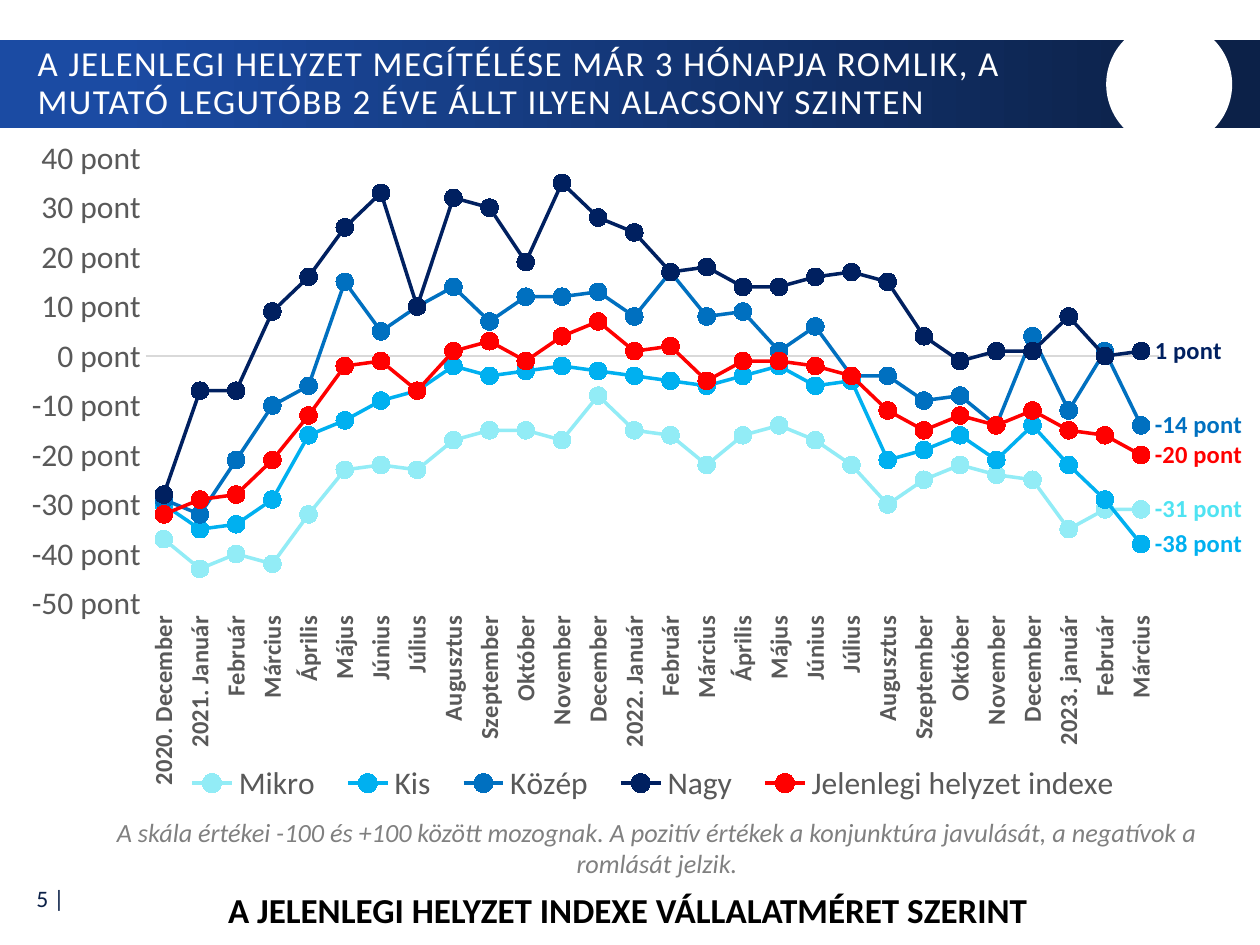
from dataclasses import dataclass

from lxml import etree
from pptx import Presentation
from pptx.chart.data import CategoryChartData
from pptx.dml.color import RGBColor
from pptx.enum.chart import (XL_CHART_TYPE, XL_LABEL_POSITION, XL_LEGEND_POSITION,
                             XL_MARKER_STYLE, XL_TICK_LABEL_POSITION, XL_TICK_MARK)
from pptx.enum.shapes import MSO_SHAPE
from pptx.enum.text import MSO_ANCHOR, PP_ALIGN
from pptx.oxml.ns import qn
from pptx.util import Cm, Pt

LINE_MARKERS = XL_CHART_TYPE.LINE_MARKERS
LABEL_RIGHT = XL_LABEL_POSITION.RIGHT
LEGEND_BOTTOM = XL_LEGEND_POSITION.BOTTOM
CIRCLE = XL_MARKER_STYLE.CIRCLE
LABELS_LOW = XL_TICK_LABEL_POSITION.LOW
NO_TICK = XL_TICK_MARK.NONE
RECTANGLE, OVAL = MSO_SHAPE.RECTANGLE, MSO_SHAPE.OVAL
TOP, MIDDLE = MSO_ANCHOR.TOP, MSO_ANCHOR.MIDDLE
LEFT, CENTER, RIGHT = PP_ALIGN.LEFT, PP_ALIGN.CENTER, PP_ALIGN.RIGHT


@dataclass(frozen=True)
class Theme:
    font: str = "Calibri"
    blue: str = "1B4BA3"
    navy: str = "0C2148"
    white: str = "FFFFFF"
    black: str = "000000"
    note: str = "808080"
    axis_text: str = "595959"
    axis_line: str = "D9D9D9"
    heading_size: float = 20
    large_size: float = 18
    note_size: float = 15
    label_size: float = 14
    page_size: float = 13.5


THEME = Theme()
POINT_FORMAT = 'General\\ "pont"'
EDGES = {"xMode": "edge", "yMode": "edge"}
PLOT_LAYOUT = {"layoutTarget": "inner", **EDGES,
               "x": 0.116, "y": 0.045, "w": 0.807, "h": 0.652}
LEGEND_LAYOUT = {**EDGES, "x": 0.135, "y": 0.925, "w": 0.77, "h": 0.07}

MONTHS = ["Január", "Február", "Március", "Április", "Május", "Június", "Július",
          "Augusztus", "Szeptember", "Október", "November", "December"]
CATEGORIES = (["2020. December", "2021. Január"] + MONTHS[1:]
              + ["2022. Január"] + MONTHS[1:] + ["2023. január"] + MONTHS[1:3])

# name, line colour, end label colour, values
SERIES = [
    ("Mikro", "92ECF6", "4FE3F2",
     [-37, -43, -40, -42, -32, -23, -22, -23, -17, -15, -15, -17, -8, -15,
      -16, -22, -16, -14, -17, -22, -30, -25, -22, -24, -25, -35, -31, -31]),
    ("Kis", "00B0F0", "00B0F0",
     [-30, -35, -34, -29, -16, -13, -9, -7, -2, -4, -3, -2, -3, -4,
      -5, -6, -4, -2, -6, -5, -21, -19, -16, -21, -14, -22, -29, -38]),
    ("Közép", "0070C0", "0070C0",
     [-29, -32, -21, -10, -6, 15, 5, 10, 14, 7, 12, 12, 13, 8,
      17, 8, 9, 1, 6, -4, -4, -9, -8, -14, 4, -11, 1, -14]),
    ("Nagy", "002060", "002060",
     [-28, -7, -7, 9, 16, 26, 33, 10, 32, 30, 19, 35, 28, 25,
      17, 18, 14, 14, 16, 17, 15, 4, -1, 1, 1, 8, 0, 1]),
    ("Jelenlegi helyzet indexe", "FF0000", "FF0000",
     [-32, -29, -28, -21, -12, -2, -1, -7, 1, 3, -1, 4, 7, 1,
      2, -5, -1, -1, -2, -4, -11, -15, -12, -14, -11, -15, -16, -20]),
]


def rgb(color):
    return RGBColor.from_string(color)


def set_attributes(target, values):
    for name, value in values.items():
        setattr(target, name, value)


def style_font(font, size, color, bold=False, italic=False):
    set_attributes(font, {"name": THEME.font, "size": Pt(size),
                          "bold": bold, "italic": italic})
    font.color.rgb = rgb(color)


def add_text(slide, box, text, size, color, align=CENTER, anchor=TOP, **style):
    """Add a wrapped one-paragraph text box and return its paragraph."""
    frame = slide.shapes.add_textbox(*map(Cm, box)).text_frame
    set_attributes(frame, {"word_wrap": True, "vertical_anchor": anchor})
    paragraph = frame.paragraphs[0]
    paragraph.alignment = align
    run = paragraph.add_run()
    run.text = text
    style_font(run.font, size, color, **style)
    return paragraph


def add_plain_shape(slide, kind, box):
    shape = slide.shapes.add_shape(kind, *map(Cm, box))
    shape.shadow.inherit = False
    shape.line.fill.background()
    return shape


def add_header(slide, left, top, width, height, title):
    """Gradient band with a white disc at its right end and the title on it."""
    fill = add_plain_shape(slide, RECTANGLE, (left, top, width, height)).fill
    fill.gradient()
    fill.gradient_angle = 0
    for stop, color, position in zip(fill.gradient_stops,
                                     (THEME.blue, THEME.navy), (0.09, 0.95)):
        stop.color.rgb = rgb(color)
        stop.position = position

    diameter = 2.54
    disc = add_plain_shape(slide, OVAL, (left + width - diameter - 0.56,
                                         top + (height - diameter) / 2,
                                         diameter, diameter))
    disc.fill.solid()
    disc.fill.fore_color.rgb = rgb(THEME.white)

    paragraph = add_text(slide, (left + 0.51, top + 0.04, width - 3.53, height - 0.08),
                         title, THEME.heading_size, THEME.white, LEFT, MIDDLE)
    paragraph.line_spacing = 0.9
    paragraph.runs[0].font._element.set("spc", "80")


def set_layout(parent, index, settings):
    """Place a chart part by fractions of the chart; index is its schema position."""
    for old_layout in parent.findall(qn("c:layout")):
        parent.remove(old_layout)
    layout = etree.Element(qn("c:layout"))
    parent.insert(index, layout)
    manual = etree.SubElement(layout, qn("c:manualLayout"))
    for name, value in settings.items():
        etree.SubElement(manual, qn(f"c:{name}")).set("val", str(value))


def style_axes(chart):
    category, value = chart.category_axis, chart.value_axis
    for axis, size, bold in ((category, THEME.label_size, True),
                             (value, THEME.large_size, False)):
        set_attributes(axis, {"major_tick_mark": NO_TICK, "minor_tick_mark": NO_TICK,
                              "has_major_gridlines": False})
        style_font(axis.tick_labels.font, size, THEME.axis_text, bold=bold)
    category.tick_label_position = LABELS_LOW
    category.format.line.color.rgb = rgb(THEME.axis_line)
    category.format.line.width = Pt(0.75)
    category._element.find(qn("c:txPr")).find(qn("a:bodyPr")).set("rot", "-5400000")
    set_attributes(value, {"minimum_scale": -50, "maximum_scale": 40, "major_unit": 10})
    set_attributes(value.tick_labels, {"number_format": POINT_FORMAT,
                                       "number_format_is_linked": False})
    value.format.line.fill.background()


def style_series(series, color, label_color):
    series.smooth = False
    series.format.line.color.rgb = rgb(color)
    series.format.line.width = Pt(2)
    marker = series.marker
    set_attributes(marker, {"style": CIRCLE, "size": 10})
    marker.format.fill.solid()
    marker.format.fill.fore_color.rgb = rgb(color)
    marker.format.line.color.rgb = rgb(color)
    series.data_labels.show_value = False
    label = series.points[len(CATEGORIES) - 1].data_label
    style_font(label.font, THEME.label_size, label_color, bold=True)
    label.position = LABEL_RIGHT


def add_index_chart(slide, left, top, width, height):
    data = CategoryChartData(number_format=POINT_FORMAT)
    data.categories = CATEGORIES
    for name, _, _, values in SERIES:
        data.add_series(name, values)
    chart = slide.shapes.add_chart(LINE_MARKERS, *map(Cm, (left, top, width, height)),
                                   data).chart
    set_attributes(chart, {"has_title": False, "has_legend": True})
    style_font(chart.font, THEME.large_size, THEME.black)
    set_attributes(chart.legend, {"position": LEGEND_BOTTOM, "include_in_layout": False})
    style_font(chart.legend.font, THEME.large_size, THEME.axis_text)
    chart.plots[0].vary_by_categories = False
    set_layout(chart._chartSpace.chart.plotArea, 0, PLOT_LAYOUT)
    set_layout(chart.legend._element, 1, LEGEND_LAYOUT)
    style_axes(chart)
    for series, (_, color, label_color, _) in zip(chart.plots[0].series, SERIES):
        style_series(series, color, label_color)


def add_footer(slide, left, top, width):
    """Scale note, chart caption and page number."""
    add_text(slide, (left + 1.65, top, width - 2.21, 1.55),
             "A skála értékei -100 és +100 között mozognak. A pozitív értékek a "
             "konjunktúra javulását, a negatívok a romlását jelzik.",
             THEME.note_size, THEME.note, italic=True)
    add_text(slide, (left, top + 1.45, width - 0.08, 1.12),
             "A JELENLEGI HELYZET INDEXE VÁLLALATMÉRET SZERINT",
             THEME.heading_size, THEME.black, bold=True)
    add_text(slide, (left + 0.03, top + 1.3, 1.52, 0.94), "5 |",
             THEME.page_size, THEME.navy, RIGHT, MIDDLE)


def main():
    presentation = Presentation()
    presentation.slide_width, presentation.slide_height = Cm(25.4), Cm(19.05)
    slide = presentation.slides.add_slide(presentation.slide_layouts[6])
    add_header(slide, 0, 0.81, 25.4, 1.78,
               "A JELENLEGI HELYZET MEGÍTÉLÉSE MÁR 3 HÓNAPJA ROMLIK, A MUTATÓ "
               "LEGUTÓBB 2 ÉVE ÁLLT ILYEN ALACSONY SZINTEN")
    add_index_chart(slide, 0, 2.57, 25.32, 13.77)
    add_footer(slide, 0, 16.33, 25.4)
    presentation.save("out.pptx")


if __name__ == "__main__":
    main()
